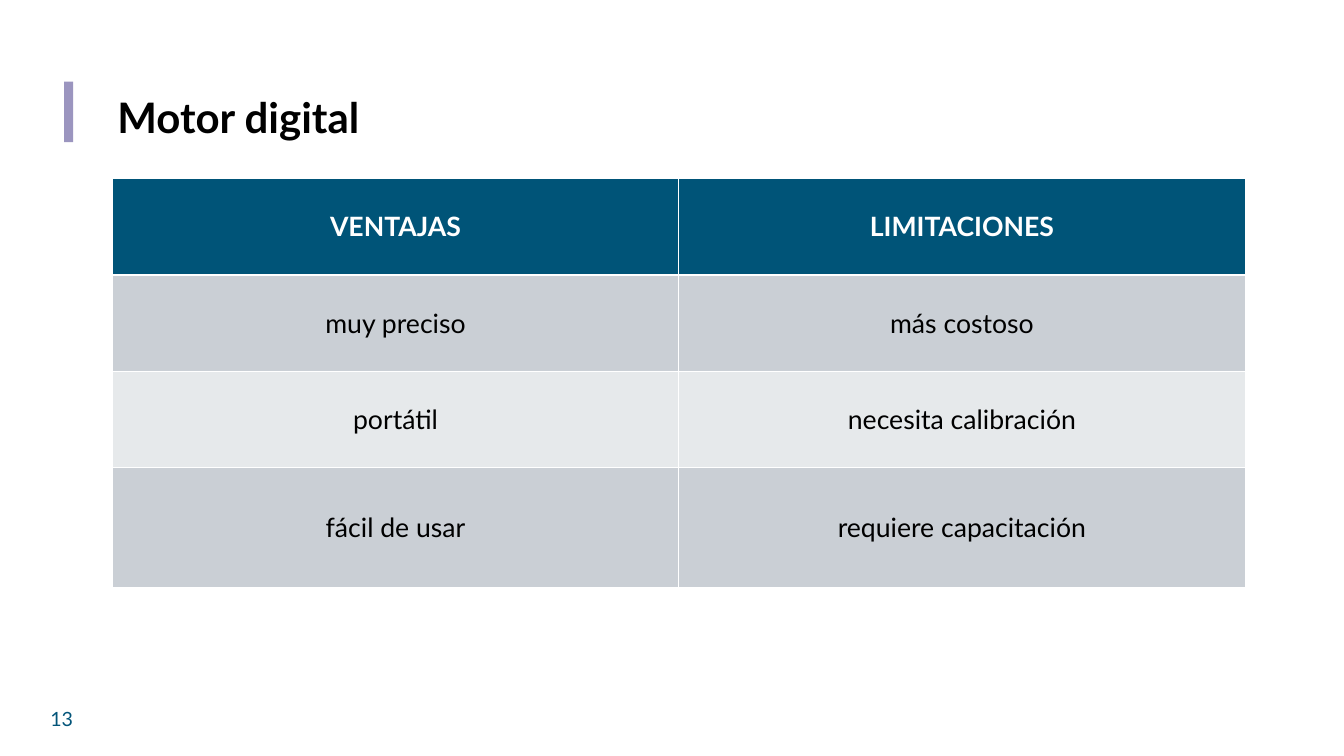
"""Build the slide on advantages and limitations of the digital motor."""
from dataclasses import dataclass

from lxml import etree
from pptx import Presentation
from pptx.dml.color import RGBColor
from pptx.enum.shapes import MSO_SHAPE
from pptx.enum.text import MSO_ANCHOR, MSO_AUTO_SIZE, PP_ALIGN
from pptx.oxml.ns import qn
from pptx.util import Inches, Pt

RECTANGLE = MSO_SHAPE.RECTANGLE
MIDDLE = MSO_ANCHOR.MIDDLE
LEFT, CENTER = PP_ALIGN.LEFT, PP_ALIGN.CENTER
FIT_SHAPE = MSO_AUTO_SIZE.SHAPE_TO_FIT_TEXT


@dataclass(frozen=True)
class Theme:
    font: str = "Lato"
    title_size: int = 60
    table_size: int = 38
    number_size: int = 28
    text: str = "000000"
    white: str = "FFFFFF"
    accent: str = "9B95BF"
    number: str = "025479"
    header: str = "005478"
    bands: tuple = ("CACFD5", "E6E9EB")


THEME = Theme()

ROWS = [
    ("VENTAJAS", "LIMITACIONES"),
    ("muy preciso", "más costoso"),
    ("portátil", "necesita calibración"),
    ("fácil de usar", "requiere capacitación"),
]
ROW_HEIGHTS = (1.91, 1.91, 1.91, 2.38)
COLUMN_WIDTH = 11.24


def write(tf, text, size, color, bold=False, align=LEFT):
    p = tf.paragraphs[0]
    p.alignment = align
    r = p.add_run()
    r.text = text
    r.font.name = THEME.font
    r.font.size = Pt(size)
    r.font.bold = bold
    r.font.color.rgb = RGBColor.from_string(color)


def set_margins(target, horizontal, vertical):
    target.margin_left = target.margin_right = Inches(horizontal)
    target.margin_top = target.margin_bottom = Inches(vertical)


def add_bar(s, x, y, w, h):
    sp = s.shapes.add_shape(RECTANGLE, Inches(x), Inches(y), Inches(w), Inches(h))
    sp.shadow.inherit = False
    sp.fill.solid()
    sp.fill.fore_color.rgb = RGBColor.from_string(THEME.accent)
    sp.line.fill.background()


def add_text(s, box, text, size, color, bold=False, align=LEFT, margins=(0.1, 0.05)):
    sp = s.shapes.add_textbox(*map(Inches, box))
    tf = sp.text_frame
    tf.word_wrap = True
    tf.auto_size = FIT_SHAPE
    set_margins(tf, *margins)
    write(tf, text, size, color, bold, align)


def set_borders(cell, widths):
    tc_pr = cell._tc.get_or_add_tcPr()
    for side, width in widths.items():
        ln = etree.SubElement(tc_pr, qn(f"a:ln{side}"), w=str(Pt(width)))
        fill = etree.SubElement(ln, qn("a:solidFill"))
        etree.SubElement(fill, qn("a:srgbClr"), val=THEME.white)


def style_cell(cell, text, row):
    is_header = row == 0
    set_borders(cell, {"L": 1, "R": 1, "T": 3 if row == 1 else 1, "B": 3 if is_header else 1})
    cell.fill.solid()
    fill = THEME.header if is_header else THEME.bands[(row - 1) % 2]
    cell.fill.fore_color.rgb = RGBColor.from_string(fill)
    cell.vertical_anchor = MIDDLE
    set_margins(cell, 0.14, 0.07)
    color = THEME.white if is_header else THEME.text
    write(cell.text_frame, text, THEME.table_size, color, is_header, CENTER)


def add_comparison(s, x, y):
    n_cols = len(ROWS[0])
    frame = s.shapes.add_table(len(ROWS), n_cols, Inches(x), Inches(y),
                               Inches(COLUMN_WIDTH * n_cols), Inches(sum(ROW_HEIGHTS)))
    table = frame.table
    for col in table.columns:
        col.width = Inches(COLUMN_WIDTH)
    for i, (height, texts) in enumerate(zip(ROW_HEIGHTS, ROWS)):
        table.rows[i].height = Inches(height)
        for j, text in enumerate(texts):
            style_cell(table.cell(i, j), text, i)


def main():
    prs = Presentation()
    prs.slide_width, prs.slide_height = Inches(26.67), Inches(15)
    s = prs.slides.add_slide(prs.slide_layouts[6])
    add_bar(s, 1.27, 1.62, 0.18, 1.2)
    add_text(s, (0.95, 13.96, 0.55, 0.58), "13", THEME.number_size, THEME.number,
             align=CENTER, margins=(0, 0.06))
    add_text(s, (2.23, 1.77, 10.82, 1.11), "Motor digital", THEME.title_size,
             THEME.text, bold=True)
    add_comparison(s, 2.23, 3.54)
    prs.save("out.pptx")


if __name__ == "__main__":
    main()
